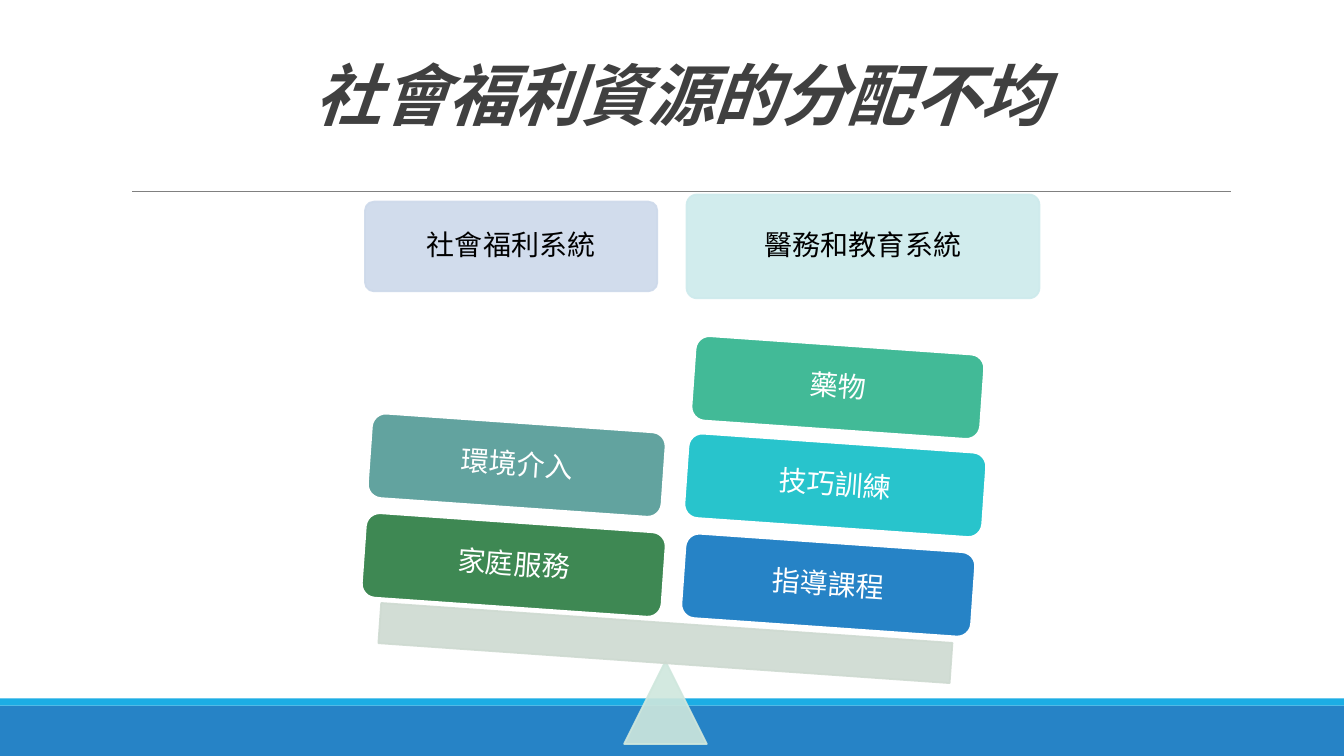
from lxml.etree import SubElement
from pptx import Presentation
from pptx.dml.color import RGBColor
from pptx.enum.shapes import MSO_CONNECTOR, MSO_SHAPE as SHAPE
from pptx.enum.text import MSO_ANCHOR, MSO_AUTO_SIZE, PP_ALIGN
from pptx.oxml.ns import qn
from pptx.util import Inches, Pt


def rgb(value):
    return RGBColor.from_string(value)


class Deck:
    font = "Times New Roman"
    label_size = 20
    inset = 0.08
    tilt = 4

    def __init__(self, prs):
        self.slide = prs.slides.add_slide(prs.slide_layouts[5])

    def set_text(self, sp, text, color, inset, spacing=0.9, **font):
        tf = sp.text_frame
        margin = Inches(inset)
        frame = {"word_wrap": True, "auto_size": MSO_AUTO_SIZE.NONE,
                 "vertical_anchor": MSO_ANCHOR.MIDDLE,
                 "margin_left": margin, "margin_right": margin,
                 "margin_top": margin, "margin_bottom": margin}
        for name, value in frame.items():
            setattr(tf, name, value)
        p = tf.paragraphs[0]
        p.alignment = PP_ALIGN.CENTER
        p.line_spacing = spacing
        r = p.add_run()
        r.text = text
        for name, value in {"name": self.font, **font}.items():
            setattr(r.font, name, value)
        r.font.color.rgb = rgb(color)
        return r

    def title(self, text, box):
        sp = self.slide.shapes.title
        sp.left, sp.top, sp.width, sp.height = map(Inches, box)
        r = self.set_text(sp, text, "404040", 0.05, 0.85,
                          size=Pt(48), bold=True, italic=True)
        r.font._element.set("spc", "-50")

    def rule(self, left, right, y, color, width):
        line = self.slide.shapes.add_connector(
            MSO_CONNECTOR.STRAIGHT, *map(Inches, (left, y, right, y)))
        line.line.color.rgb = rgb(color)
        line.line.width = Pt(width)
        SubElement(line._element.spPr, qn("a:effectLst"))

    def shape(self, kind, box, fill, line=None, width=1.25, rotation=0, alpha=None):
        sp = self.slide.shapes.add_shape(kind, *map(Inches, box))
        sp.shadow.inherit = False
        sp.rotation = rotation
        sp.fill.solid()
        sp.fill.fore_color.rgb = rgb(fill)
        if line:
            sp.line.color.rgb = rgb(line)
            sp.line.width = Pt(width)
        else:
            sp.line.fill.background()
        if alpha:
            for color in sp._element.spPr.iter(qn("a:srgbClr")):
                SubElement(color, qn("a:alpha"), val=str(alpha * 1000))
        return sp

    def pale(self, kind, box, color, rotation=0):
        return self.shape(kind, box, color, color, rotation=rotation, alpha=90)

    def label(self, sp, text, color):
        self.set_text(sp, text, color, self.inset, size=Pt(self.label_size))

    def heading(self, text, box, fill):
        sp = self.pale(SHAPE.ROUNDED_RECTANGLE, box, fill)
        sp.adjustments[0] = 0.1
        self.label(sp, text, "000000")

    def weight(self, text, left, top, width, fill):
        sp = self.shape(SHAPE.ROUNDED_RECTANGLE, (left, top, width, 0.85), fill,
                        "FFFFFF", 2, self.tilt)
        self.label(sp, text, "FFFFFF")


def main():
    prs = Presentation()
    prs.slide_width, prs.slide_height = Inches(13.33), Inches(7.5)
    deck = Deck(prs)

    deck.shape(SHAPE.RECTANGLE, (0, 7, 13.33, 0.5), "2683C6")
    deck.shape(SHAPE.RECTANGLE, (0, 6.93, 13.33, 0.07), "1CADE4")
    deck.rule(1.31, 12.21, 1.9, "808080", 0.5)
    deck.title("社會福利資源的分配不均", (0.43, 0.31, 12.65, 1.36))

    deck.heading("社會福利系統", (3.62, 2, 2.9, 0.89), "CDD9EA")
    deck.heading("醫務和教育系統", (6.81, 1.93, 3.5, 1.03), "CDEAEC")

    deck.pale(SHAPE.ISOSCELES_TRIANGLE, (6.19, 6.56, 0.82, 0.82), "CFE7DD")
    deck.pale(SHAPE.RECTANGLE, (3.76, 6.18, 5.68, 0.4), "CEDAD1", deck.tilt)

    weights = [
        ("指導課程", 6.77, 5.38, 2.89, "2683C6"),
        ("技巧訓練", 6.8, 4.39, 2.97, "28C4CC"),
        ("藥物", 6.87, 3.42, 2.88, "42BA97"),
        ("家庭服務", 3.6, 5.18, 2.99, "3E8853"),
        ("環境介入", 3.66, 4.19, 2.93, "62A39F"),
    ]
    for weight in weights:
        deck.weight(*weight)

    prs.save("out.pptx")


if __name__ == "__main__":
    main()
